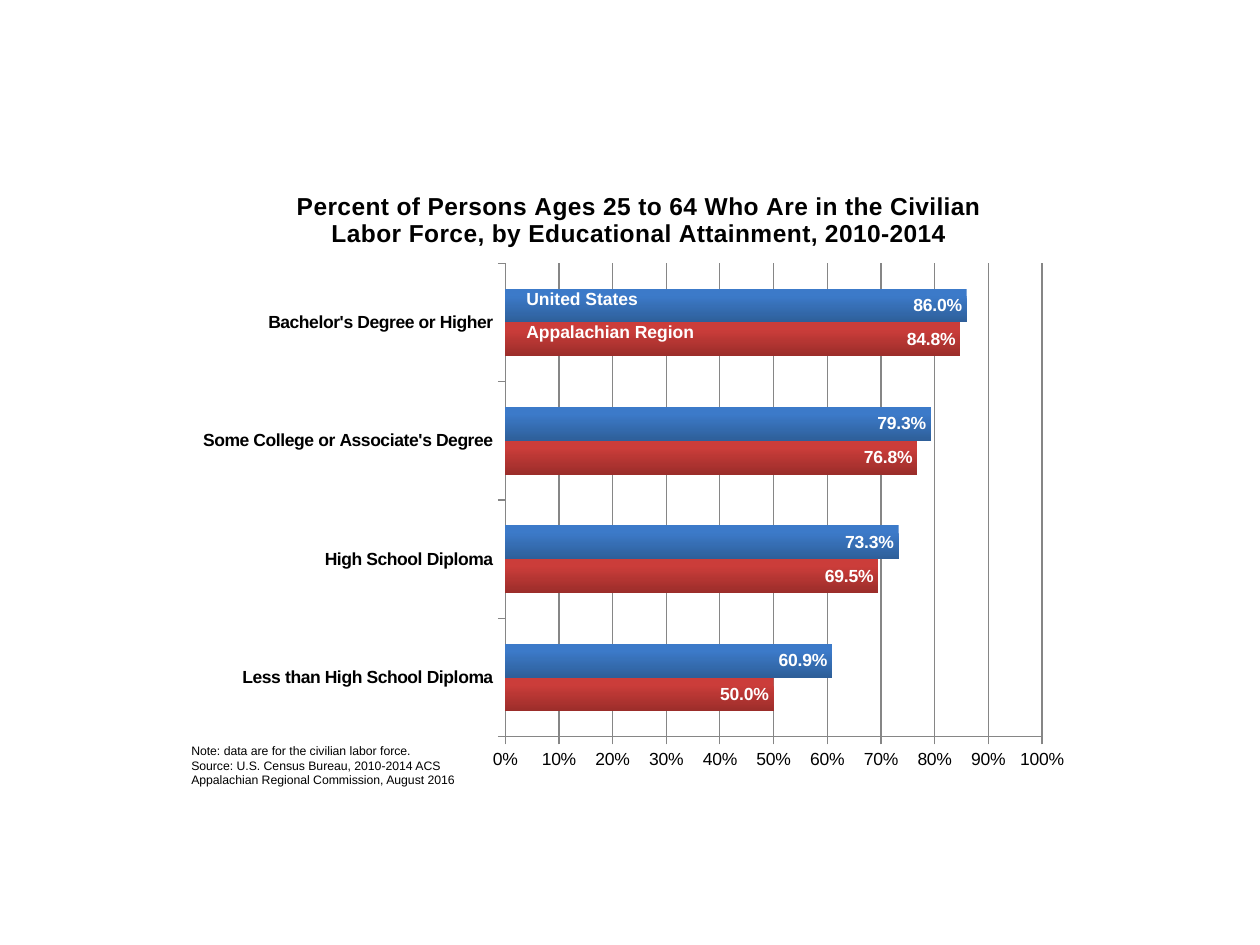
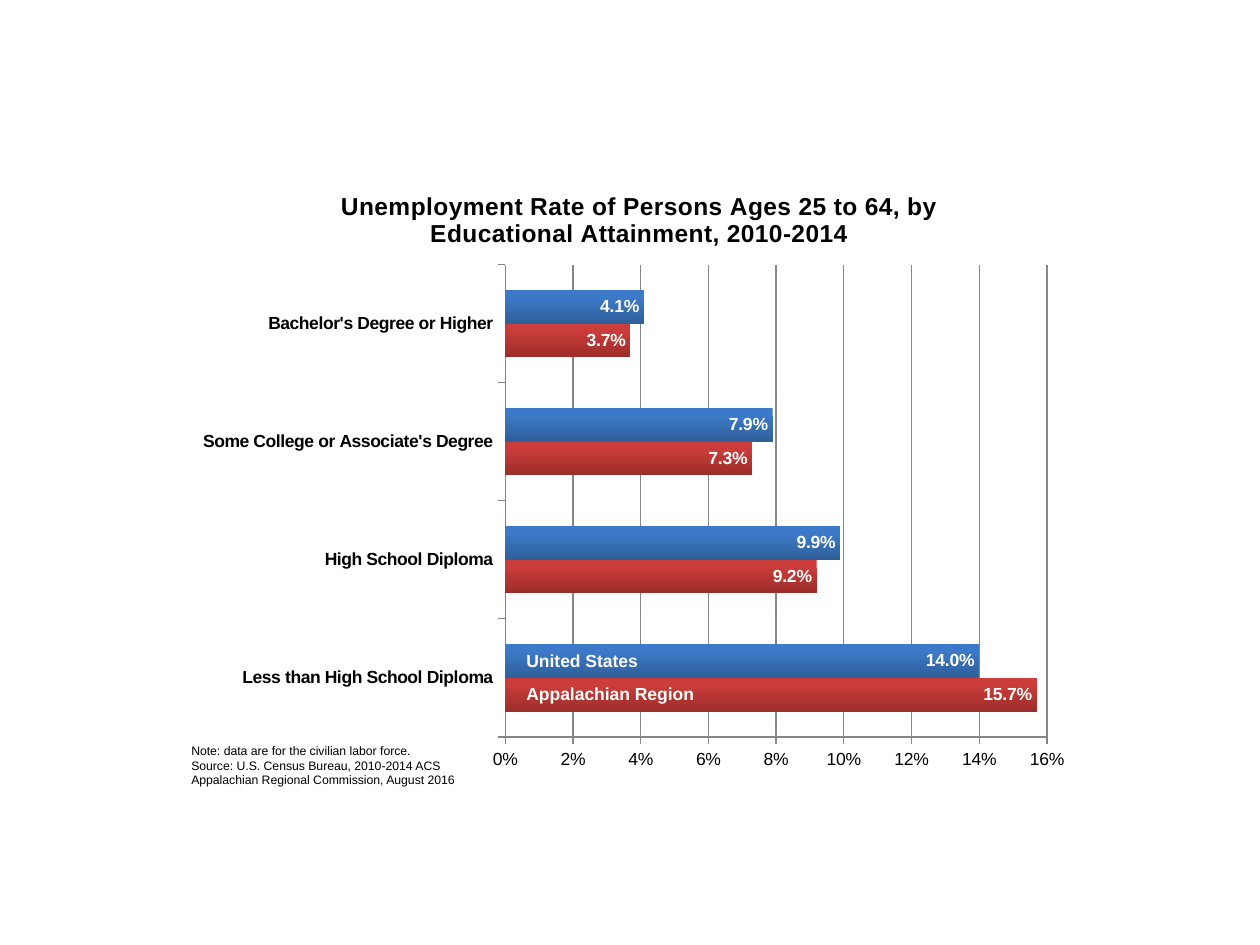
from dataclasses import dataclass

from lxml.etree import SubElement
from pptx import Presentation
from pptx.chart.data import CategoryChartData
from pptx.dml.color import RGBColor
from pptx.enum.chart import XL_CHART_TYPE, XL_LABEL_POSITION, XL_TICK_MARK
from pptx.oxml.ns import qn
from pptx.util import Inches, Pt

FONT = "Arial"
COLORS = {
    "text": "000000",
    "label": "FFFFFF",
    "axis": "868686",
    "region_top": "CB3D3A",
    "region_bottom": "9B2D2A",
    "nation_top": "3C7AC9",
    "nation_bottom": "2E5F99",
}
EDUCATION = [
    "Less than High School Diploma",
    "High School Diploma",
    "Some College or Associate's Degree",
    "Bachelor's Degree or Higher",
]
NOTES = [
    "Note: data are for the civilian labor force.",
    "Source: U.S. Census Bureau, 2010-2014 ACS",
    "Appalachian Regional Commission, August 2016",
]


@dataclass(frozen=True)
class Box:
    left: float
    top: float
    width: float
    height: float

    def inches(self) -> list:
        return [Inches(v) for v in (self.left, self.top, self.width, self.height)]


@dataclass(frozen=True)
class RateSlide:
    title: str
    region: tuple
    nation: tuple
    maximum: int
    unit: int
    title_left: float
    plot: Box
    key_top: float


CHART = Box(1.42, 1.3, 7.17, 4.9)
RATE_SLIDES = [
    RateSlide(
        "Percent of Persons Ages 25 to 64 Who Are in the Civilian Labor Force, "
        "by Educational Attainment, 2010-2014",
        (50, 69.5, 76.8, 84.8), (60.9, 73.3, 79.3, 86),
        100, 10, 2.32, Box(4.01, 2.09, 4.26, 3.76), 2.24,
    ),
    RateSlide(
        "Unemployment Rate of Persons Ages 25 to 64, by Educational Attainment, 2010-2014",
        (15.7, 9.2, 7.3, 3.7), (14, 9.9, 7.9, 4.1),
        16, 2, 2.67, Box(4.01, 2.1, 4.3, 3.75), 5.11,
    ),
]


def rgb(name: str) -> RGBColor:
    return RGBColor.from_string(COLORS[name])


def style_font(font, size: float, color: str, bold: bool = False) -> None:
    font.name = FONT
    font.size = Pt(size)
    font.bold = bold
    font.color.rgb = rgb(color)


def set_spacing(element, tag: str, spacing: int) -> None:
    for props in element.iter(qn(tag)):
        props.set("spc", str(spacing))


def place_manually(parent, before: str, values: dict, inner: bool = False) -> None:
    for old in parent.findall(qn("c:layout")):
        parent.remove(old)
    layout = SubElement(parent, qn("c:layout"))
    manual = SubElement(layout, qn("c:manualLayout"))
    if inner:
        SubElement(manual, qn("c:layoutTarget")).set("val", "inner")
    for key in ("xMode", "yMode"):
        SubElement(manual, qn(f"c:{key}")).set("val", "edge")
    for key, value in values.items():
        SubElement(manual, qn(f"c:{key}")).set("val", f"{value:.4f}")
    parent.find(qn(before)).addprevious(layout)


def add_text(s, box: Box, lines: list, size: float, color: str, bold: bool = False) -> None:
    tf = s.shapes.add_textbox(*box.inches()).text_frame
    tf.word_wrap = True
    tf.text = "\n".join(lines)
    for p in tf.paragraphs:
        style_font(p.font, size, color, bold)


def style_series(series, name: str) -> None:
    fill = series.format.fill
    fill.gradient()
    fill.gradient_angle = 270
    for stop, end, position in zip(fill.gradient_stops, ("top", "bottom"), (0.2, 1)):
        stop.color.rgb = rgb(f"{name}_{end}")
        stop.position = position
    labels = series.data_labels
    labels.show_value = True
    labels.position = XL_LABEL_POSITION.INSIDE_END
    labels.number_format = "0.0##\\%"
    labels.number_format_is_linked = False
    style_font(labels.font, 10, "label", True)


def style_axis(axis, bold: bool) -> None:
    axis.major_tick_mark = XL_TICK_MARK.OUTSIDE
    axis.minor_tick_mark = XL_TICK_MARK.NONE
    axis.format.line.color.rgb = rgb("axis")
    axis.format.line.width = Pt(0.75)
    style_font(axis.tick_labels.font, 10, "text", bold)


def add_title(chart, rate: RateSlide) -> None:
    tf = chart.chart_title.text_frame
    tf.text = rate.title
    style_font(tf.paragraphs[0].runs[0].font, 14, "text", True)
    title = chart.chart_title._element
    set_spacing(title, "a:rPr", 10)
    chart.chart_title.include_in_layout = False
    position = {"x": (rate.title_left - CHART.left) / CHART.width, "y": 0.035}
    place_manually(title, "c:overlay", position)


def add_rate_chart(s, rate: RateSlide) -> None:
    data = CategoryChartData()
    data.categories = EDUCATION
    data.add_series("Series 1", rate.region)
    data.add_series("Series 2", rate.nation)
    chart = s.shapes.add_chart(XL_CHART_TYPE.BAR_CLUSTERED, *CHART.inches(), data).chart
    chart.has_legend = False
    style_font(chart.font, 10, "text")
    add_title(chart, rate)

    plot = chart.plots[0]
    plot.gap_width = 150
    plot.vary_by_categories = False
    for series, name in zip(plot.series, ("region", "nation")):
        style_series(series, name)

    style_axis(chart.category_axis, True)
    set_spacing(chart.category_axis._element, "a:defRPr", -10)
    values = chart.value_axis
    style_axis(values, False)
    values.minimum_scale = 0
    values.maximum_scale = rate.maximum
    values.major_unit = rate.unit
    values.has_major_gridlines = True
    grid = values.major_gridlines.format.line
    grid.color.rgb = rgb("axis")
    grid.width = Pt(0.75)
    values.tick_labels.number_format = "0\\%"
    values.tick_labels.number_format_is_linked = False

    area = rate.plot
    position = {
        "x": (area.left - CHART.left) / CHART.width,
        "y": (area.top - CHART.top) / CHART.height,
        "w": area.width / CHART.width,
        "h": area.height / CHART.height,
    }
    plot_area = chart._chartSpace.chart.plotArea
    place_manually(plot_area, "c:barChart", position, inner=True)


def main() -> None:
    prs = Presentation()
    prs.slide_width, prs.slide_height = Inches(10), Inches(7.5)
    for rate in RATE_SLIDES:
        s = prs.slides.add_slide(prs.slide_layouts[6])
        add_rate_chart(s, rate)
        add_text(s, Box(4.08, rate.key_top, 1.83, 0.21), ["United States"], 10, "label", True)
        add_text(s, Box(4.08, rate.key_top + 0.26, 1.83, 0.27), ["Appalachian Region"], 10, "label", True)
        add_text(s, Box(1.42, 5.85, 2.56, 0.5), NOTES, 7, "text")
    prs.save("out.pptx")


if __name__ == "__main__":
    main()
